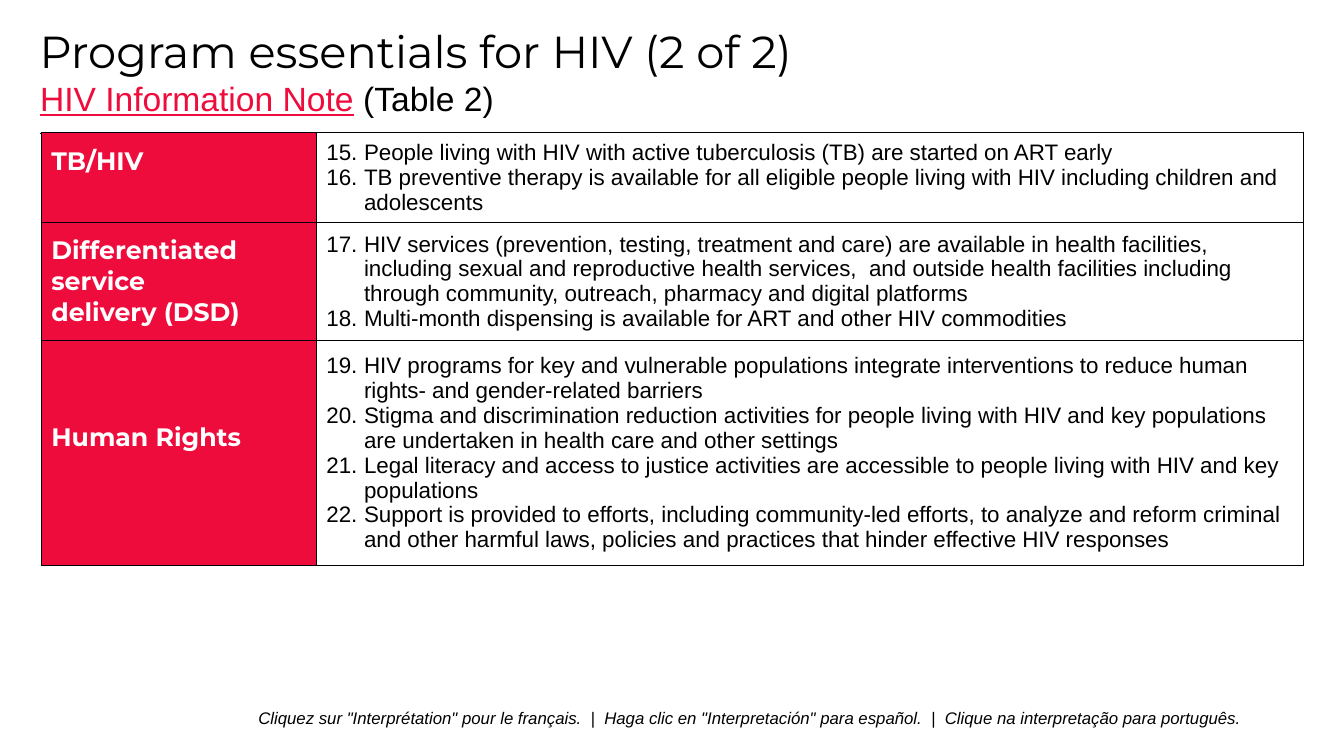
from dataclasses import dataclass

from lxml import etree
from pptx import Presentation
from pptx import util as u
from pptx.dml.color import RGBColor
from pptx.enum import shapes, text
from pptx.oxml import ns

Cm = u.Cm
RED, BLACK, WHITE = "EE0C3D", "000000", "FFFFFF"
BODY, HEADING = "Arial", "Montserrat"
NBSP = chr(160)
ANCHOR = text.MSO_ANCHOR


@dataclass
class Topic:
    label: str
    height: float
    start: int
    essentials: list[str]
    label_bottom: float = 0.13


TOPICS = [
    Topic("TB/HIV", 2.13, 15, [
        "People living with HIV with active tuberculosis (TB) are started on ART early",
        "TB preventive therapy is available for all eligible people living with HIV "
        "including children and adolescents",
    ], 0.91),
    Topic(f"Differentiated service delivery{NBSP}(DSD)", 2.77, 17, [
        "HIV services (prevention, testing, treatment and care) are available in health "
        f"facilities, including sexual and reproductive health services,{NBSP}{NBSP}and outside "
        "health facilities including through community, outreach, pharmacy and digital platforms",
        "Multi-month dispensing is available for ART and other HIV commodities",
    ]),
    Topic("Human Rights", 5.3, 19, [
        "HIV programs for key and vulnerable populations integrate interventions to reduce "
        "human rights- and gender-related barriers",
        "Stigma and discrimination reduction activities for people living with HIV and key "
        "populations are undertaken in health care and other settings",
        "Legal literacy and access to justice activities are accessible to people living "
        "with HIV and key populations",
        "Support is provided to efforts, including community-led efforts, to analyze and "
        "reform criminal and other harmful laws, policies and practices that hinder "
        "effective HIV responses",
    ], 0.91),
]


def rgb(value: str) -> RGBColor:
    return RGBColor.from_string(value)


def add_run(p, content: str, *, size: float, font: str = BODY, color: str = BLACK,
            bold: bool = False, italic: bool = False, underline: bool = False) -> None:
    r = p.add_run()
    r.text = content
    r.font.size = u.Pt(size)
    r.font.name = font
    r.font.bold = bold
    r.font.italic = italic
    r.font.underline = underline
    r.font.color.rgb = rgb(color)


def add_box(s, left: float, top: float, width: float, height: float, *,
            anchor=ANCHOR.TOP, margins: bool = True):
    tf = s.shapes.add_textbox(Cm(left), Cm(top), Cm(width), Cm(height)).text_frame
    tf.word_wrap = True
    tf.vertical_anchor = anchor
    if not margins:
        tf.margin_left = tf.margin_right = tf.margin_top = tf.margin_bottom = 0
    return tf.paragraphs[0]


def number(p, start: int) -> None:
    pPr = p._p.get_or_add_pPr()
    pPr.set("marL", str(Cm(0.95)))
    pPr.set("indent", str(-Cm(0.95)))
    etree.SubElement(pPr, ns.qn("a:buFont"), typeface="+mj-lt")
    etree.SubElement(pPr, ns.qn("a:buAutoNum"), type="arabicPeriod", startAt=str(start))


def style_cell(cell, fill: str) -> None:
    tcPr = cell._tc.get_or_add_tcPr()
    for side in ("a:lnL", "a:lnR", "a:lnT", "a:lnB"):
        ln = etree.SubElement(tcPr, ns.qn(side), w=str(u.Pt(1)))
        solid = etree.SubElement(ln, ns.qn("a:solidFill"))
        etree.SubElement(solid, ns.qn("a:srgbClr"), val=BLACK)
    cell.fill.solid()
    cell.fill.fore_color.rgb = rgb(fill)
    cell.vertical_anchor = ANCHOR.MIDDLE


def add_rule(s) -> None:
    rule = s.shapes.add_connector(shapes.MSO_CONNECTOR.STRAIGHT,
                                  Cm(1), Cm(3.35), Cm(32.87), Cm(3.35))
    rule.line.color.rgb = rgb(BLACK)
    rule.line.width = u.Pt(0.5)
    etree.SubElement(rule._element.spPr, ns.qn("a:effectLst"))


def add_topics(s) -> None:
    height = sum(topic.height for topic in TOPICS)
    table = s.shapes.add_table(len(TOPICS), 2, Cm(1.04), Cm(3.33), Cm(31.8), Cm(height)).table
    table.first_row = table.horz_banding = False
    for column, width in zip(table.columns, (6.93, 24.87)):
        column.width = Cm(width)
    for i, topic in enumerate(TOPICS):
        table.rows[i].height = Cm(topic.height)
        label, details = table.cell(i, 0), table.cell(i, 1)
        style_cell(label, RED)
        style_cell(details, WHITE)
        label.margin_bottom = Cm(topic.label_bottom)
        add_run(label.text_frame.paragraphs[0], topic.label,
                size=18, font=HEADING, color=WHITE, bold=True)
        tf = details.text_frame
        for j, essential in enumerate(topic.essentials):
            p = tf.add_paragraph() if j else tf.paragraphs[0]
            number(p, topic.start)
            add_run(p, essential, size=16)


def main() -> None:
    prs = Presentation()
    prs.slide_width, prs.slide_height = Cm(33.87), Cm(19.05)
    s = prs.slides.add_slide(prs.slide_layouts[6])

    p = add_box(s, 5.51, 17.7, 26.8, 0.76, anchor=ANCHOR.BOTTOM)
    p.alignment = text.PP_ALIGN.CENTER
    add_run(p, 'Cliquez sur "Interprétation" pour le français.  |  '
               'Haga clic en "Interpretación" para español.  |  '
               'Clique na interpretação para português.', size=12, italic=True)

    add_rule(s)

    p = add_box(s, 1, 0.76, 31.88, 1.3, margins=False)
    p.line_spacing = 0.9
    add_run(p, "Program essentials for HIV (2 of 2)", size=32, font=HEADING)

    add_topics(s)

    p = add_box(s, 0.76, 1.83, 31.88, 1.3)
    add_run(p, "HIV Information Note", size=24, color=RED, underline=True)
    add_run(p, " (Table 2)", size=24)

    prs.save("out.pptx")


if __name__ == "__main__":
    main()
